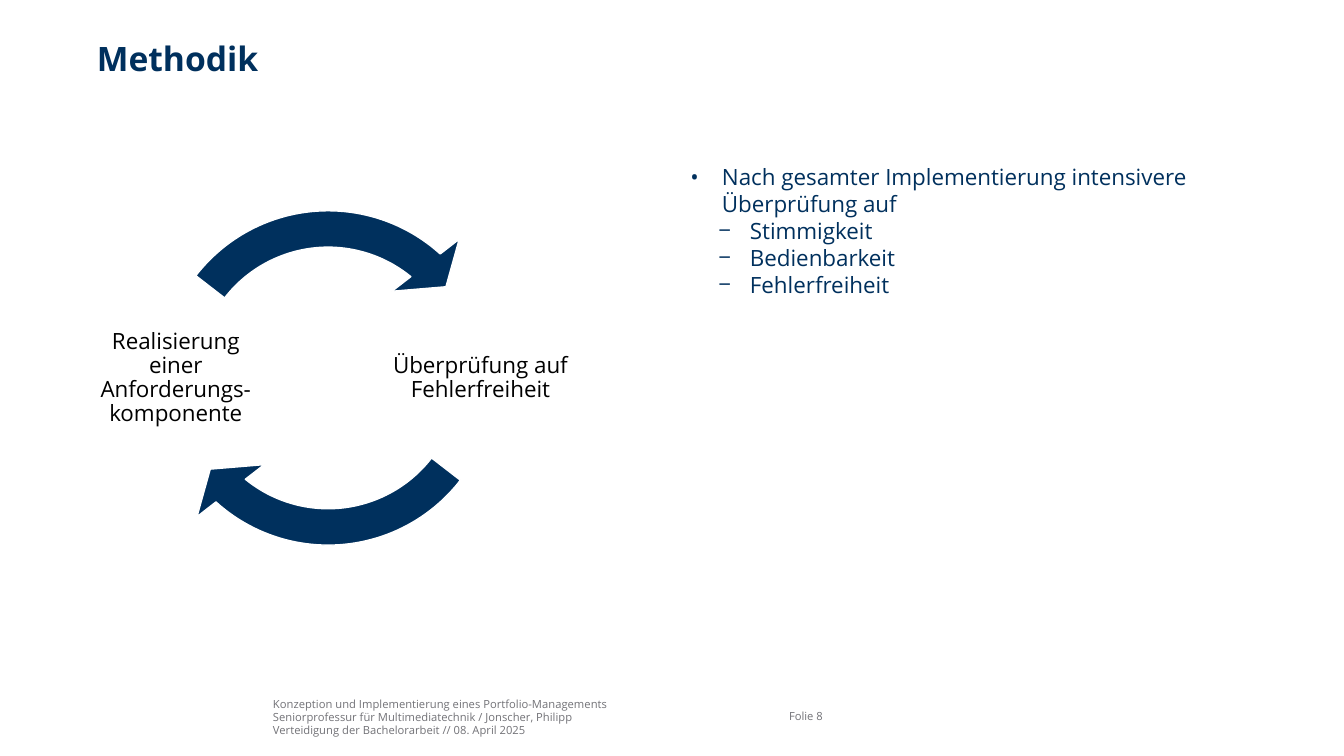
from lxml.etree import SubElement
from pptx import Presentation
from pptx.dml.color import RGBColor
from pptx.enum.shapes import MSO_SHAPE as Shape
from pptx.enum.text import MSO_ANCHOR as Anchor, MSO_AUTO_SIZE as AutoSize, PP_ALIGN as Align
from pptx.oxml.ns import qn
from pptx.util import Pt

COLORS = {"navy": "00305D", "gray": "727277", "black": "000000", "white": "FFFFFF"}
FONT = "Open Sans"

TITLE = "Methodik"
FINDINGS = [
    (0, "Nach gesamter Implementierung intensivere Überprüfung auf"),
    (1, "Stimmigkeit"),
    (1, "Bedienbarkeit"),
    (1, "Fehlerfreiheit"),
]
BULLETS = [("•", 22.5), ("−", 42.5)]  # sign and left margin per level
HANGING = 22.5
CYCLE_STEPS = ["Realisierung einer Anforderungs-komponente", "Überprüfung auf Fehlerfreiheit"]
FOOTER = [
    "Konzeption und Implementierung eines Portfolio-Managements",
    "Seniorprofessur für Multimediatechnik / Jonscher, Philipp",
    "Verteidigung der Bachelorarbeit // 08. April 2025",
]
PAGE = "Folie 8"

CYCLE_CENTER = (234.4, 270)
RING_SIZE = 273.6
STEP_SIZE = 133.2
STEP_OFFSET = 108.8
HALF_TURN = 108  # 180 degrees in adjustment units


def rgb(name):
    return RGBColor.from_string(COLORS[name])


def add_bullet(paragraph, level):
    sign, margin = BULLETS[level]
    paragraph.level = level
    props = paragraph._p.get_or_add_pPr()
    props.set("marL", str(Pt(margin)))
    props.set("indent", str(-Pt(HANGING)))
    SubElement(props, qn("a:buFont"), typeface=FONT)
    SubElement(props, qn("a:buChar"), char=sign)


def write(box, lines, size, color, bold=False, align=Align.LEFT, anchor=Anchor.TOP,
          inset=0, spacing=None, levels=None):
    frame = box.text_frame
    frame.word_wrap = True
    frame.auto_size = AutoSize.NONE
    frame.vertical_anchor = anchor
    frame.margin_left = frame.margin_right = Pt(inset)
    frame.margin_top = frame.margin_bottom = Pt(inset)
    for index, line in enumerate(lines):
        paragraph = frame.add_paragraph() if index else frame.paragraphs[0]
        paragraph.text = line
        if levels:
            add_bullet(paragraph, levels[index])
        paragraph.alignment = align
        if spacing:
            paragraph.line_spacing = spacing
        font = paragraph.font
        font.name, font.size, font.bold = FONT, Pt(size), bold
        font.color.rgb = rgb(color)


def add_text(slide, place, lines, size, color, **text_format):
    box = slide.shapes.add_textbox(*map(Pt, place))
    write(box, lines, size, color, **text_format)


def centered_square(x, y, size):
    return x - size / 2, y - size / 2, size, size


def add_cycle(slide):
    x, y = CYCLE_CENTER
    for index, step in enumerate(CYCLE_STEPS):
        step_x = x + (2 * index - 1) * STEP_OFFSET
        add_text(slide, centered_square(step_x, y, STEP_SIZE), [step], 16, "black",
                 align=Align.CENTER, anchor=Anchor.MIDDLE, inset=1.6, spacing=0.9)
        ring = centered_square(x, y, RING_SIZE)
        arrow = slide.shapes.add_shape(Shape.CIRCULAR_ARROW, *map(Pt, ring))
        turn = index * HALF_TURN
        for position, value in enumerate([0.095, 6.848, 78.518 + turn, 22.635 + turn, 0.111]):
            arrow.adjustments[position] = value
        arrow.shadow.inherit = False
        arrow.fill.solid()
        arrow.fill.fore_color.rgb = rgb("navy")
        arrow.line.color.rgb = rgb("white")
        arrow.line.width = Pt(1)


def main():
    deck = Presentation()
    deck.slide_width, deck.slide_height = Pt(960), Pt(540)
    slide = deck.slides.add_slide(deck.slide_layouts[5])

    title = slide.shapes.title
    title.left, title.top, title.width, title.height = map(Pt, (69.2, 27.4, 833, 54))
    write(title, [TITLE], 24, "navy", bold=True)

    add_cycle(slide)
    levels, findings = zip(*FINDINGS)
    add_text(slide, (493.2, 116.6, 409, 343.4), findings, 16, "navy", levels=levels)
    add_text(slide, (195, 497.5, 353, 29), FOOTER, 8, "gray", anchor=Anchor.BOTTOM)
    add_text(slide, (563.6, 497, 55.4, 29), [PAGE], 8, "gray", anchor=Anchor.MIDDLE)
    deck.save("out.pptx")


if __name__ == "__main__":
    main()
